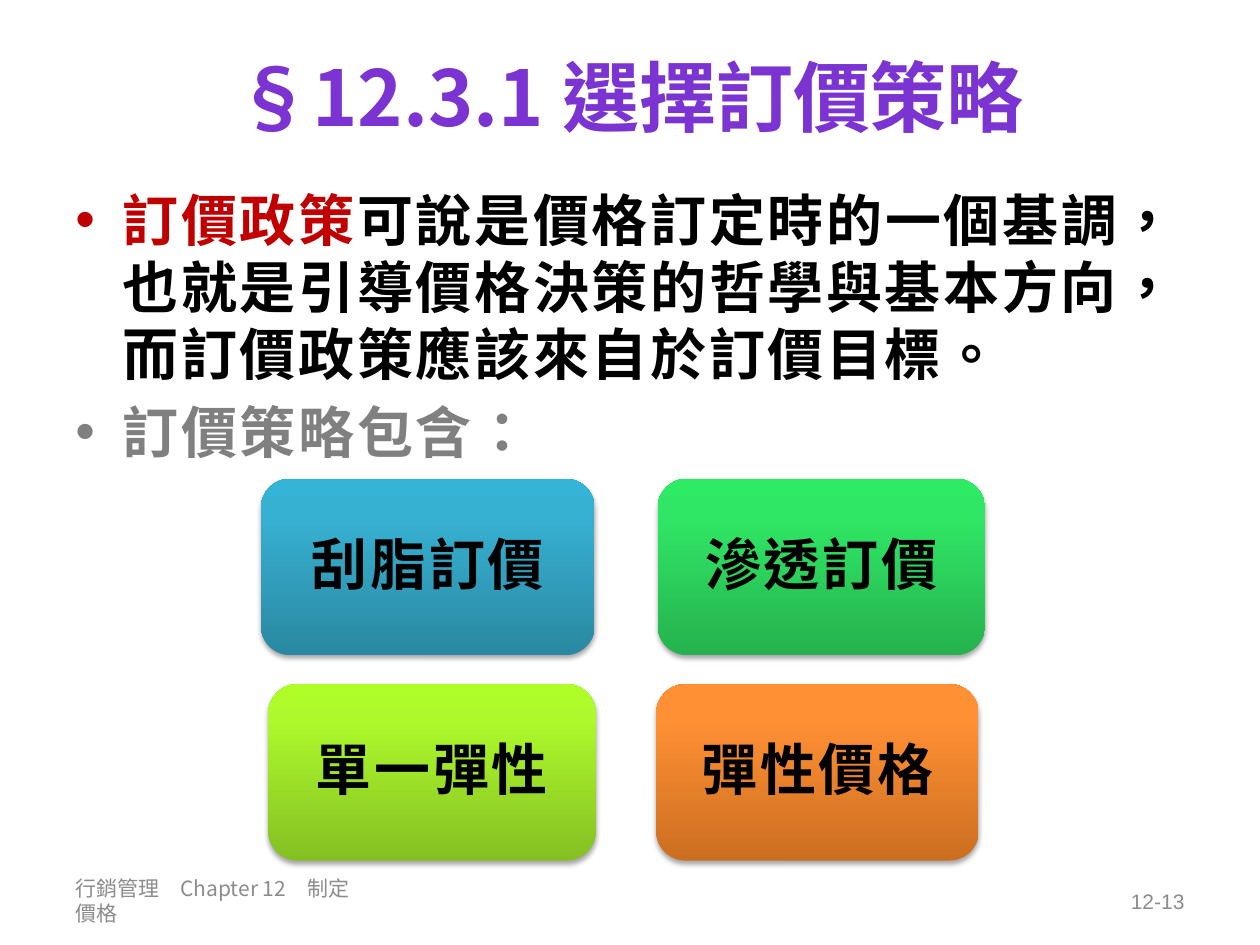
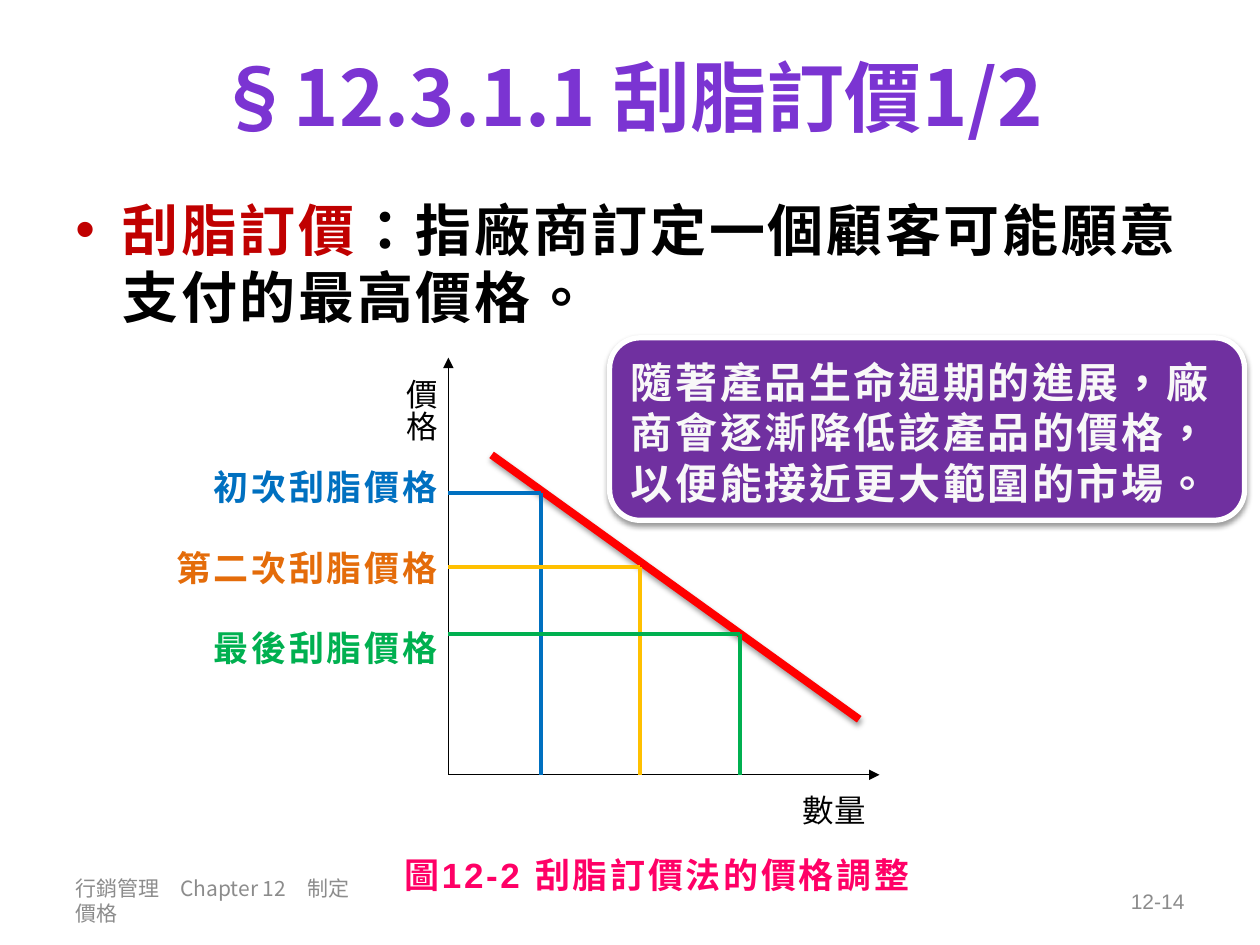
"""Build two slides about choosing a pricing strategy and price skimming."""
from copy import deepcopy

from lxml import etree
from pptx import Presentation
from pptx import util as u
from pptx.dml.color import RGBColor
from pptx.enum import shapes, text
from pptx.oxml.ns import qn

PURPLE = RGBColor(0x7B, 0x34, 0xD2)
CALLOUT_FILL = RGBColor(0x70, 0x30, 0xA0)
CRIMSON = RGBColor(0xC0, 0x00, 0x00)
RED = RGBColor(0xFF, 0x00, 0x00)
PINK = RGBColor(0xFF, 0x00, 0x66)
BLACK = RGBColor(0x00, 0x00, 0x00)
GREY = RGBColor(0x80, 0x80, 0x80)
FOOTER_GREY = RGBColor(0x8C, 0x8C, 0x8C)
WHITE = RGBColor(0xFF, 0xFF, 0xFF)
OFF_WHITE = RGBColor(0xF8, 0xF8, 0xF8)
BLUE = RGBColor(0x00, 0x70, 0xC0)
ORANGE = RGBColor(0xE4, 0x6C, 0x0A)
AMBER = RGBColor(0xFF, 0xC0, 0x00)
GREEN = RGBColor(0x00, 0xB0, 0x50)

CJK_FONT = "Noto Sans CJK SC"
LATIN_FONT = "Arial"
FOOTER_TEXT = "行銷管理　Chapter 12　制定價格"
LINE_PITCH = 1.195

TITLE = dict(size=u.Pt(44), bold=True, name=CJK_FONT)
BODY = dict(size=u.Pt(32), bold=True, name=LATIN_FONT)
BOX_LABEL = dict(BODY, name=CJK_FONT)
CALLOUT = dict(BODY, size=u.Pt(24))
CHART_LABEL = dict(BODY, size=u.Pt(20))
AXIS_LABEL = dict(size=u.Pt(18), bold=False, name=LATIN_FONT)
FOOTER = dict(size=u.Pt(12), bold=False, name=CJK_FONT)
PAGE_NUMBER = dict(FOOTER, name=LATIN_FONT)

LEFT, CENTER, RIGHT = text.PP_ALIGN.LEFT, text.PP_ALIGN.CENTER, text.PP_ALIGN.RIGHT
TOP, MIDDLE = text.MSO_ANCHOR.TOP, text.MSO_ANCHOR.MIDDLE


def add_span(para, words, style, color, spacing=0):
    """Add one formatted run to a paragraph."""
    span = para.add_run()
    span.text = words
    for name, value in style.items():
        setattr(span.font, name, value)
    span.font.color.rgb = color
    properties = span.font._element if hasattr(span.font, "_element") else span._r.get_or_add_rPr()
    properties.set("lang", "zh-TW")
    properties.set("spc", str(spacing))
    etree.SubElement(properties, qn("a:ea"), typeface=CJK_FONT)


def set_frame(shape, anchor=TOP):
    """Turn on wrapping, fix the size and anchor the text of a shape."""
    frame = shape.text_frame
    values = dict(word_wrap=True, auto_size=text.MSO_AUTO_SIZE.NONE, vertical_anchor=anchor)
    for name, value in values.items():
        setattr(frame, name, value)
    return frame


def add_text(page, place, words, style, color, align=LEFT, anchor=TOP, spacing=0):
    """Add a text box that holds one paragraph."""
    box = page.shapes.add_textbox(*map(u.Cm, place))
    para = set_frame(box, anchor).paragraphs[0]
    para.alignment = align
    para.line_spacing = u.Pt(round(style["size"].pt * LINE_PITCH, 1))
    add_span(para, words, style, color, spacing)
    return box


def add_bullets(page, place, items):
    """Add bulleted paragraphs, each a list of words and colours."""
    box = page.shapes.add_textbox(*map(u.Cm, place))
    frame = set_frame(box)
    for index, spans in enumerate(items):
        para = frame.add_paragraph() if index else frame.paragraphs[0]
        properties = para._p.get_or_add_pPr()
        properties.set("marL", str(u.Cm(0.95)))
        properties.set("indent", str(u.Cm(-0.95)))
        etree.SubElement(properties, qn("a:buFont"), typeface=LATIN_FONT)
        etree.SubElement(properties, qn("a:buChar"), char="•")
        para.line_spacing = u.Pt(38.2)
        para.space_before = u.Pt(6.4 if index else 0)
        for words, color in spans:
            add_span(para, words, BODY, color, 150)


def set_shadow(shape, opacity=None, distance=1.6):
    """Replace the theme shadow by none or by a soft one below the shape."""
    effects = etree.SubElement(shape.element.spPr, qn("a:effectLst"))
    if opacity:
        outer = etree.SubElement(effects, qn("a:outerShdw"), blurRad=str(u.Pt(3.1)),
                                 dist=str(u.Pt(distance)), dir="5400000", rotWithShape="0")
        color = etree.SubElement(outer, qn("a:srgbClr"), val=str(BLACK))
        etree.SubElement(color, qn("a:alpha"), val=str(opacity * 1000))


def add_line(page, start, end, color, width, arrow=False, opacity=None):
    """Add a straight line, with an arrowhead or a shadow if asked."""
    line = page.shapes.add_connector(
        shapes.MSO_CONNECTOR.STRAIGHT, *map(u.Cm, (*start, *end)))
    line.line.color.rgb = color
    line.line.width = u.Pt(width)
    if arrow:
        etree.SubElement(line.element.spPr.find(qn("a:ln")), qn("a:tailEnd"), type="triangle")
    set_shadow(line, opacity)


def add_rounded(page, place):
    """Add a rounded rectangle."""
    return page.shapes.add_shape(shapes.MSO_SHAPE.ROUNDED_RECTANGLE, *map(u.Cm, place))


def add_strategy(page, place, words, colors):
    """Add a strategy box that shades from its dark foot upwards."""
    box = add_rounded(page, place)
    box.fill.gradient()
    box.fill.gradient_angle = 90
    stops = box.element.spPr.find(".//" + qn("a:gsLst"))
    stops.insert(1, deepcopy(stops[0]))
    for stop, position, color in zip(box.fill.gradient_stops, (0, 0.8, 1), colors):
        stop.position = position
        stop.color.rgb = RGBColor.from_string(color)
    box.line.fill.background()
    set_shadow(box, 35, 1.8)
    para = set_frame(box, MIDDLE).paragraphs[0]
    para.alignment = CENTER
    para.line_spacing = 0.9
    add_span(para, words, BOX_LABEL, BLACK, 150)


def add_callout(page, place, words):
    """Add the purple remark with a white border."""
    box = add_rounded(page, place)
    box.fill.solid()
    box.fill.fore_color.rgb = CALLOUT_FILL
    box.line.color.rgb = WHITE
    box.line.width = u.Pt(3)
    set_shadow(box, 38)
    frame = set_frame(box, MIDDLE)
    frame.margin_top = u.Cm(0.25)
    para = frame.paragraphs[0]
    para.alignment = LEFT
    para.line_spacing = u.Pt(28.7)
    add_span(para, words, CALLOUT, OFF_WHITE, 150)


def add_page(deck, heading, number):
    """Add a slide with its title, footer and page number."""
    page = deck.slides.add_slide(deck.slide_layouts[5])
    title = page.shapes.title
    for name, value in dict(left=1.27, top=0.33, width=22.86, height=3.2).items():
        setattr(title, name, u.Cm(value))
    para = set_frame(title, MIDDLE).paragraphs[0]
    para.alignment = CENTER
    add_span(para, heading, TITLE, PURPLE)
    add_text(page, (1.27, 17.65, 6.22, 1.02), FOOTER_TEXT, FOOTER, FOOTER_GREY, anchor=MIDDLE)
    add_text(page, (18.21, 17.65, 5.92, 1.02), number, PAGE_NUMBER, FOOTER_GREY, RIGHT, MIDDLE)
    return page


def build_strategies(deck):
    """Build the slide that lists the four pricing strategies."""
    page = add_page(deck, "§12.3.1 選擇訂價策略", "12-13")
    add_bullets(page, (1.27, 3.62, 22.86, 7.19), [
        [("訂價政策", CRIMSON),
         ("可說是價格訂定時的一個基調，也就是引導價格決策的哲學與基本方向，"
          "而訂價政策應該來自於訂價目標。", BLACK)],
        [("訂價策略包含：", GREY)],
    ])
    strategies = [
        (5.26, 9.65, 6.73, "刮脂訂價", ("2A88A2", "37B1D2", "34B4D6")),
        (13.26, 9.65, 6.6, "滲透訂價", ("25B24E", "30E765", "2DEB64")),
        (5.41, 13.79, 6.6, "單一彈性", ("85C022", "ADF92C", "AFFE28")),
        (13.23, 13.79, 6.5, "彈性價格", ("CC6E20", "FF9034", "FF9136")),
    ]
    for left, top, width, words, colors in strategies:
        add_strategy(page, (left, top, width, 3.56), words, colors)


def build_skimming(deck):
    """Build the slide with the price skimming diagram."""
    page = add_page(deck, "§12.3.1.1 刮脂訂價1/2", "12-14")
    add_bullets(page, (1.27, 3.82, 22.86, 4.39), [
        [("刮脂訂價", CRIMSON), ("：指廠商訂定一個顧客可能願意支付的最高價格。", BLACK)],
    ])
    axis_x, axis_y = origin = 9.04, 15.62
    for end in ((axis_x, 7.21), (17.73, axis_y)):
        add_line(page, origin, end, BLACK, 0.75, arrow=True)
    add_text(page, (15.93, 15.83, 2.72, 1.24), "數量", AXIS_LABEL, BLACK)
    price = add_text(page, (7.49, 7.39, 1.5, 2.54), "價格", AXIS_LABEL, BLACK)
    price.text_frame._txBody.bodyPr.set("vert", "eaVert")
    add_line(page, (9.91, 9.17), (17.32, 14.5), RED, 4.5, opacity=38)
    tiers = [
        ("初次刮脂價格", 10.9, 9.93, BLUE, BLUE),
        ("第二次刮脂價格", 12.9, 11.43, AMBER, ORANGE),
        ("最後刮脂價格", 14.91, 12.78, GREEN, GREEN),
    ]
    for index, (words, quantity, level, line_color, text_color) in enumerate(tiers):
        corner = quantity, level
        add_line(page, (axis_x, level), corner, line_color, 2.25)
        add_line(page, corner, (quantity, axis_y), line_color, 2.25)
        add_text(page, (2.5, 9.27 + 1.62 * index, 6.57, 1.12), words,
                 CHART_LABEL, text_color, RIGHT, spacing=150)
    add_text(page, (7.9, 17.09, 11.2, 1.12), "圖12-2 刮脂訂價法的價格調整",
             CHART_LABEL, PINK, spacing=150)
    add_callout(page, (12.29, 6.81, 12.8, 3.68),
                "隨著產品生命週期的進展，廠商會逐漸降低該產品的價格，以便能接近更大範圍的市場。")


def main():
    """Build and save the deck."""
    deck = Presentation()
    deck.slide_width, deck.slide_height = u.Cm(25.4), u.Cm(19.05)
    build_strategies(deck)
    build_skimming(deck)
    deck.save("out.pptx")


if __name__ == "__main__":
    main()
